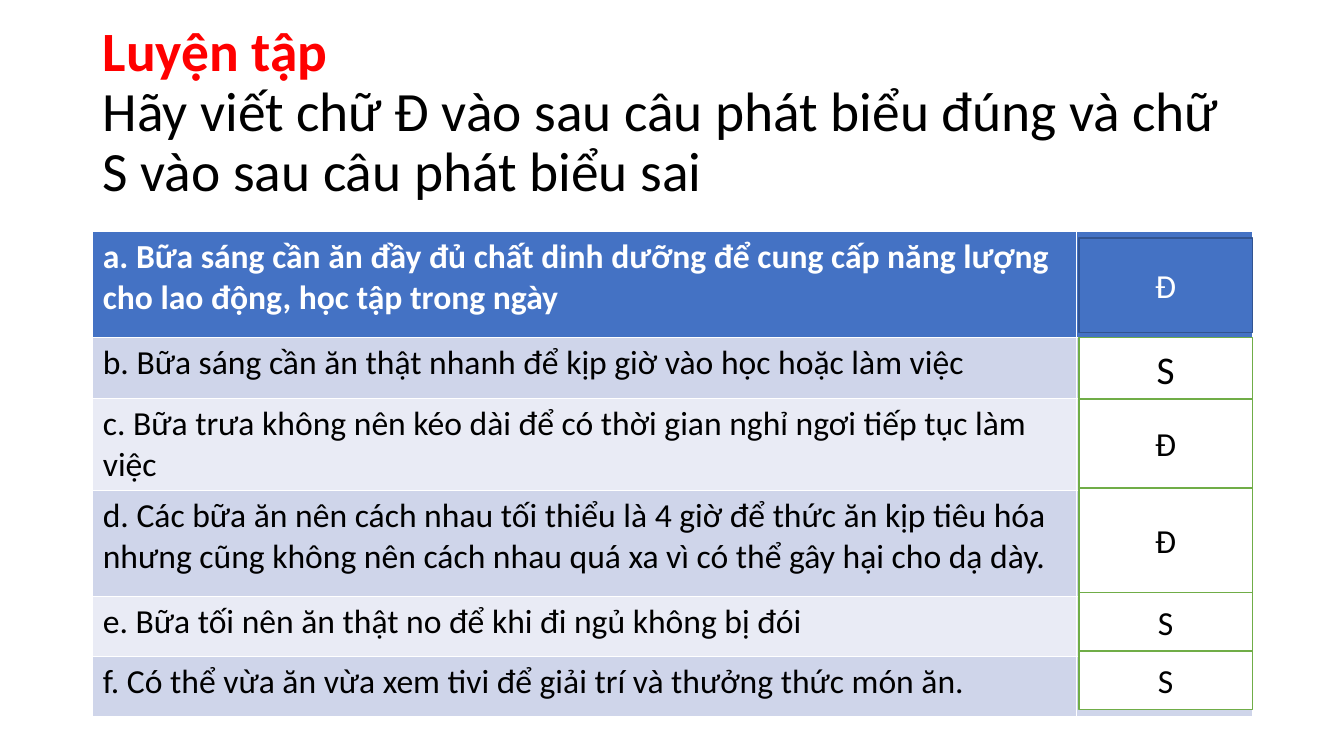
from pptx import Presentation
from pptx.dml.color import RGBColor
from pptx.enum.shapes import MSO_SHAPE as Shape
from pptx.enum.text import MSO_ANCHOR as Anchor, MSO_AUTO_SIZE as Auto, PP_ALIGN as Align
from pptx.util import Inches, Pt

HUES = {
    "red": "FF0000", "black": "000000", "white": "FFFFFF", "blue": "4472C4",
    "navy": "325491", "green": "70AD47", "dark": "CFD5EA", "light": "E9EBF5",
}
LEFT, WIDTH = 0.92, 11.5
ROWS = [
    ("a. Bữa sáng cần ăn đầy đủ chất dinh dưỡng để cung cấp năng lượng cho lao động, học tập trong ngày", 1.05),
    ("b. Bữa sáng cần ăn thật nhanh để kịp giờ vào học hoặc làm việc", 0.6),
    ("c. Bữa trưa không nên kéo dài để có thời gian nghỉ ngơi tiếp tục làm việc", 0.88),
    ("d. Các bữa ăn nên cách nhau tối thiểu là 4 giờ để thức ăn kịp tiêu hóa nhưng cũng không nên cách nhau quá xa vì có thể gây hại cho dạ dày.", 1.05),
    ("e. Bữa tối nên ăn thật no để khi đi ngủ không bị đói", 0.6),
    ("f. Có thể vừa ăn vừa xem tivi để giải trí và thưởng thức món ăn.", 0.6),
]
MARKS = [
    ("Đ", 2.36, 0.94, 24), ("S", 3.35, 0.61, 28), ("Đ", 3.96, 0.88, 24),
    ("Đ", 4.84, 1.04, 24), ("S", 5.88, 0.58, 24), ("S", 6.46, 0.58, 24),
]


def hue(name):
    return RGBColor.from_string(HUES[name])


def paint(fill, name):
    fill.solid()
    fill.fore_color.rgb = hue(name)


def style(font, size, name, bold=False):
    form = {"name": "Calibri", "size": Pt(size), "bold": bold}
    for key, value in form.items():
        setattr(font, key, value)
    font.color.rgb = hue(name)


def add_run(para, text, size, name, bold=False):
    run = para.add_run()
    run.text = text
    style(run.font, size, name, bold)


def add_title(slide):
    box = slide.shapes.add_textbox(Inches(LEFT), Inches(0.4), Inches(WIDTH), Inches(1.45))
    frame = box.text_frame
    form = {"word_wrap": True, "auto_size": Auto.NONE, "vertical_anchor": Anchor.MIDDLE}
    for key, value in form.items():
        setattr(frame, key, value)
    para = frame.paragraphs[0]
    para.line_spacing = 0.9
    add_run(para, "Luyện tập", 39.6, "red", True)
    para.add_line_break()
    add_run(para, "Hãy viết chữ Đ vào sau câu phát biểu đúng và chữ S vào sau câu phát biểu sai", 39.6, "black")


def add_grid(slide):
    high = sum(size for _, size in ROWS)
    grid = slide.shapes.add_table(
        len(ROWS), 2, Inches(LEFT), Inches(2.3), Inches(WIDTH), Inches(high)).table
    for col, wide in zip(grid.columns, (9.76, 1.74)):
        col.width = Inches(wide)
    for i, (text, size) in enumerate(ROWS):
        row = grid.rows[i]
        row.height = Inches(size)
        head = i == 0
        back = "blue" if head else ("light", "dark")[i % 2]
        for cell in row.cells:
            paint(cell.fill, back)
        para = row.cells[0].text_frame.paragraphs[0]
        add_run(para, text, 24, "white" if head else "black", head)


def add_mark(slide, text, top, high, size, back, edge, ink):
    box = slide.shapes.add_shape(
        Shape.RECTANGLE, Inches(10.7), Inches(top), Inches(1.72), Inches(high))
    box.shadow.inherit = False
    paint(box.fill, back)
    box.line.color.rgb = hue(edge)
    box.line.width = Pt(1)
    box.text_frame.vertical_anchor = Anchor.MIDDLE
    para = box.text_frame.paragraphs[0]
    para.alignment = Align.CENTER
    add_run(para, text, size, ink)


def main():
    deck = Presentation()
    deck.slide_width, deck.slide_height = Inches(13.33), Inches(7.5)
    slide = deck.slides.add_slide(deck.slide_layouts[6])
    add_title(slide)
    add_grid(slide)
    for i, mark in enumerate(MARKS):
        tones = ("white", "green", "black") if i else ("blue", "navy", "white")
        add_mark(slide, *mark, *tones)
    deck.save("out.pptx")


if __name__ == "__main__":
    main()
